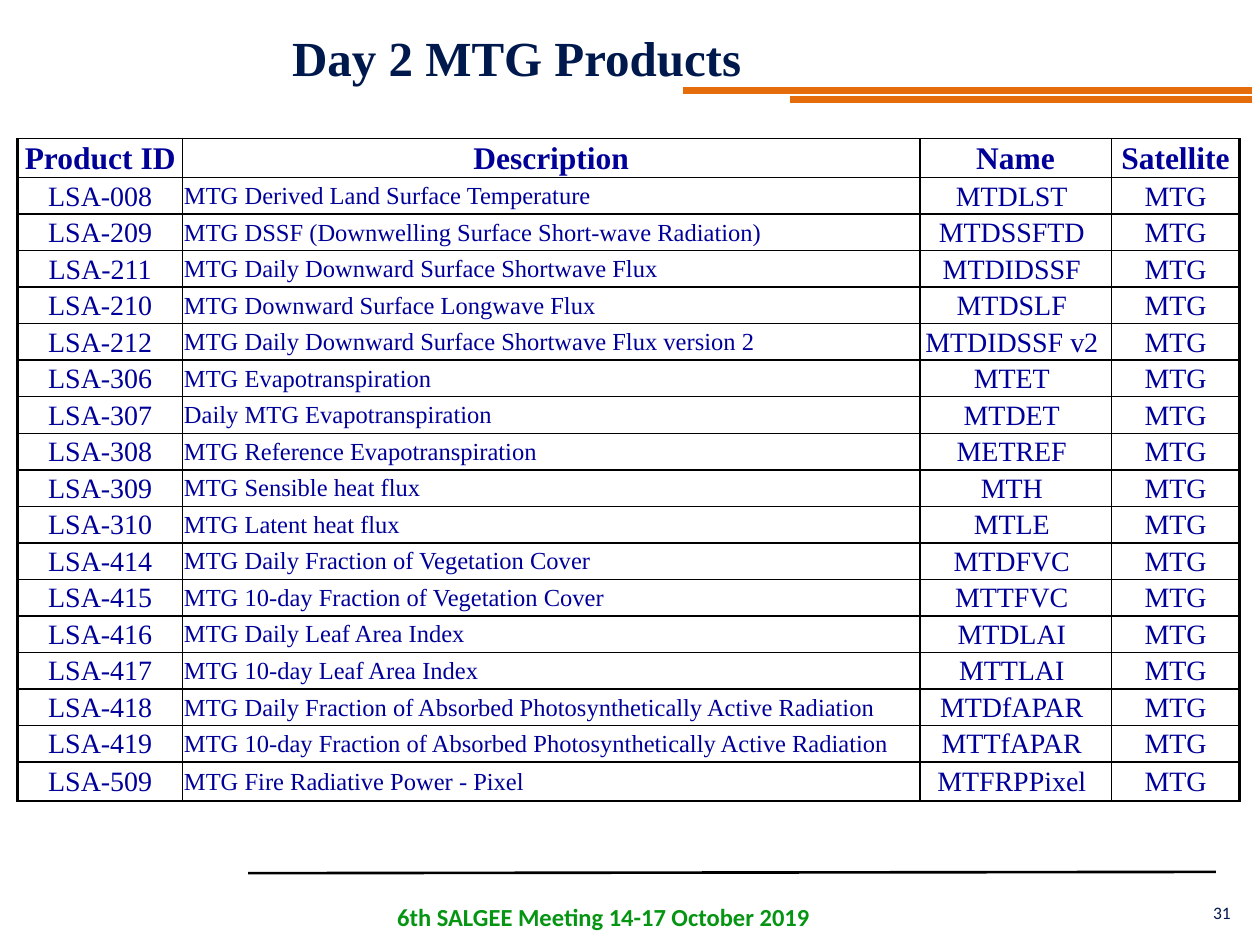
import pptx
import pptx.util
import pptx.dml.color
import pptx.enum.shapes
import pptx.enum.text
import pptx.oxml
import pptx.oxml.ns

Inches = pptx.util.Inches
Pt = pptx.util.Pt
RGBColor = pptx.dml.color.RGBColor
Align = pptx.enum.text.PP_ALIGN
Anchor = pptx.enum.text.MSO_ANCHOR

ORANGE = RGBColor(0xE4, 0x6C, 0x0A)
GREEN = RGBColor(0x05, 0x95, 0x13)
NAVY = RGBColor(0x00, 0x19, 0x4C)
BLUE = RGBColor(0x00, 0x00, 0x99)
BLACK = RGBColor(0x00, 0x00, 0x00)
SERIF = "Times New Roman"
SANS = "Calibri"

HEADINGS = ("Product ID", "Description", "Name", "Satellite")
PRODUCTS = (
    ("LSA-008", "MTG Derived Land Surface Temperature", "MTDLST"),
    ("LSA-209", "MTG DSSF (Downwelling Surface Short-wave Radiation)", "MTDSSFTD"),
    ("LSA-211", "MTG Daily Downward Surface Shortwave Flux", "MTDIDSSF"),
    ("LSA-210", "MTG Downward Surface Longwave Flux", "MTDSLF"),
    ("LSA-212", "MTG Daily Downward Surface Shortwave Flux version 2", "MTDIDSSF v2"),
    ("LSA-306", "MTG Evapotranspiration", "MTET"),
    ("LSA-307", "Daily MTG Evapotranspiration", "MTDET"),
    ("LSA-308", "MTG Reference Evapotranspiration", "METREF"),
    ("LSA-309", "MTG Sensible heat flux", "MTH"),
    ("LSA-310", "MTG Latent heat flux", "MTLE"),
    ("LSA-414", "MTG Daily Fraction of Vegetation Cover", "MTDFVC"),
    ("LSA-415", "MTG 10-day Fraction of Vegetation Cover", "MTTFVC"),
    ("LSA-416", "MTG Daily Leaf Area Index", "MTDLAI"),
    ("LSA-417", "MTG 10-day Leaf Area Index", "MTTLAI"),
    ("LSA-418", "MTG Daily Fraction of Absorbed Photosynthetically Active Radiation", "MTDfAPAR"),
    ("LSA-419", "MTG 10-day Fraction of Absorbed Photosynthetically Active Radiation", "MTTfAPAR"),
    ("LSA-509", "MTG Fire Radiative Power - Pixel", "MTFRPPixel"),
)
COLUMN_WIDTHS = (1.31, 5.85, 1.52, 1.02)


def set_all(target, values):
    for name, value in values.items():
        setattr(target, name, value)


def write(frame, text, size, face, color, bold=False, align=Align.LEFT):
    para = frame.paragraphs[0]
    para.alignment = align
    span = para.add_run()
    span.text = text
    set_all(span.font, {"size": Pt(size), "name": face, "bold": bold})
    span.font.color.rgb = color


def add_line(page, start, end, color, weight):
    points = [Inches(value) for value in start + end]
    line = page.shapes.add_connector(pptx.enum.shapes.MSO_CONNECTOR.STRAIGHT, *points)
    line.line.color.rgb = color
    line.line.width = Pt(weight)
    line._element.spPr.append(pptx.oxml.parse_xml(
        f"<a:effectLst {pptx.oxml.ns.nsdecls('a')}/>"))


def add_text(page, place, text, size, color, wrap=True, **style):
    box = page.shapes.add_textbox(*[Inches(value) for value in place])
    box.text_frame.word_wrap = wrap
    write(box.text_frame, text, size, SANS, color, **style)


def set_title(page, text):
    title = page.shapes.title
    place = {"left": 0.07, "top": 0.17, "width": 8.06, "height": 0.57}
    set_all(title, {name: Inches(value) for name, value in place.items()})
    set_all(title.text_frame, {
        "word_wrap": True,
        "auto_size": pptx.enum.text.MSO_AUTO_SIZE.NONE,
        "vertical_anchor": Anchor.MIDDLE,
    })
    write(title.text_frame, text, 28, SERIF, NAVY, True, Align.CENTER)


def set_borders(cell, weights):
    properties = cell._tc.get_or_add_tcPr()
    for index, (side, weight) in enumerate(weights.items()):
        properties.insert(index, pptx.oxml.parse_xml(
            f"<a:ln{side} {pptx.oxml.ns.nsdecls('a')} w='{Pt(weight)}'>"
            f"<a:solidFill><a:srgbClr val='{BLACK}'/></a:solidFill></a:ln{side}>"))


def fill_cell(cell, text, row, column):
    header = row == 0
    description = column == 1 and not header
    name = column == 2 and not header
    set_all(cell, {
        "margin_left": Inches(0.01),
        "margin_right": Inches(0.07 if name else 0.01),
        "margin_top": Inches(0.01),
        "margin_bottom": 0,
        "vertical_anchor": Anchor.MIDDLE,
    })
    size = 18 if header else 14 if description else 16
    align = Align.LEFT if description else Align.CENTER
    write(cell.text_frame, text, size, SERIF, BLUE, header, align)
    cell.fill.background()
    last = len(COLUMN_WIDTHS) - 1
    set_borders(cell, {
        "L": 2.25 if column == 0 else 1,
        "R": 2.25 if column == last else 1,
        "T": 1,
        "B": 1,
    })


def add_products(page):
    rows = [HEADINGS] + [product + ("MTG",) for product in PRODUCTS]
    place = [Inches(value) for value in (0.14, 1.1, 9.7, 5.28)]
    table = page.shapes.add_table(len(rows), len(HEADINGS), *place).table
    set_all(table, {"first_row": False, "horz_banding": False})
    for column, width in zip(table.columns, COLUMN_WIDTHS):
        column.width = Inches(width)
    for row, texts in enumerate(rows):
        edge = row in (0, len(rows) - 1)
        table.rows[row].height = Inches(0.31 if edge else 0.29)
        for column, text in enumerate(texts):
            fill_cell(table.cell(row, column), text, row, column)


def main():
    deck = pptx.Presentation()
    deck.slide_width = Inches(10)
    deck.slide_height = Inches(7.5)
    page = deck.slides.add_slide(deck.slide_layouts[5])
    add_line(page, (6.27, 0.79), (9.94, 0.79), ORANGE, 4)
    add_line(page, (5.42, 0.72), (9.94, 0.72), ORANGE, 4)
    add_text(page, (2.83, 7.11, 3.92, 0.34), "6th SALGEE Meeting 14-17 October 2019",
             14, GREEN, bold=True, align=Align.CENTER)
    add_text(page, (9.53, 7.11, 0.36, 0.27), "31", 10, NAVY, wrap=False)
    add_line(page, (1.97, 6.93), (9.65, 6.92), BLACK, 1.5)
    add_products(page)
    set_title(page, "Day 2 MTG Products")
    deck.save("out.pptx")


if __name__ == "__main__":
    main()
